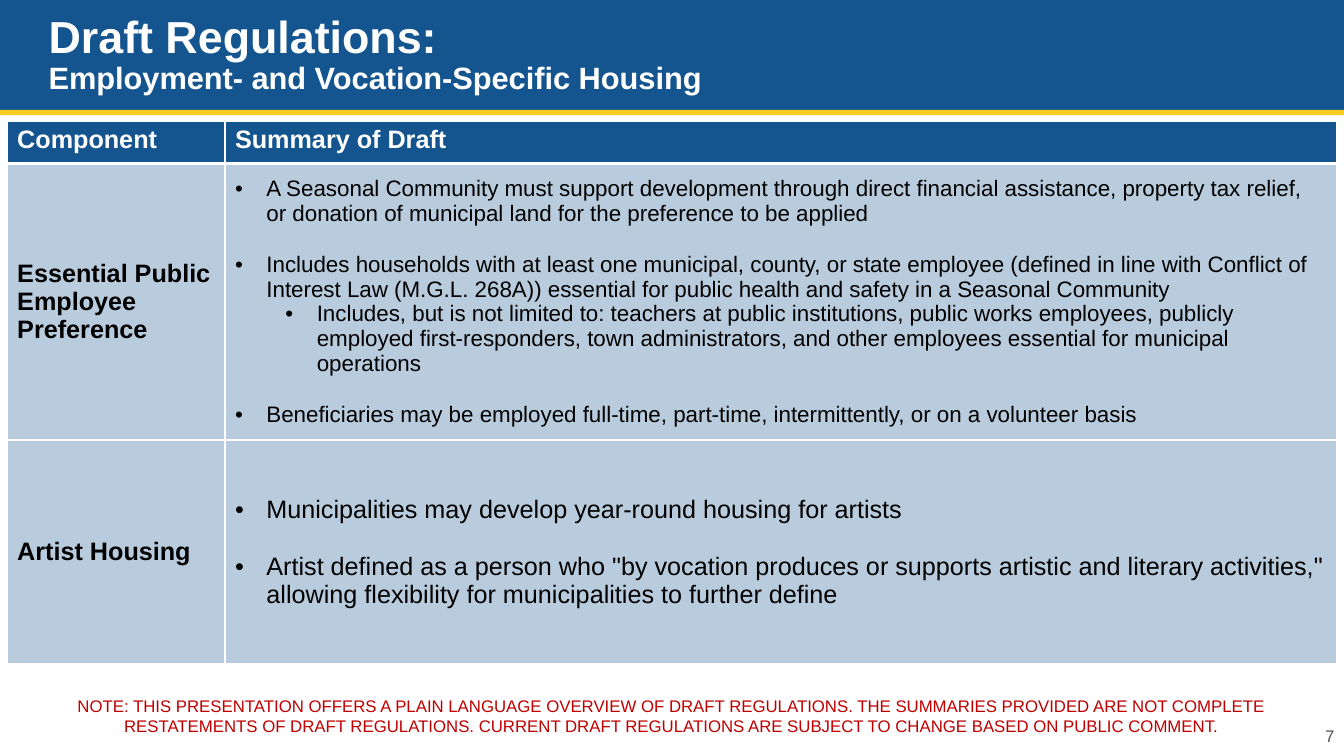
"""Build the slide on draft regulations for employment- and vocation-specific housing."""
import pptx
import pptx.util
import pptx.dml.color
import pptx.enum.shapes
import pptx.enum.text
import pptx.oxml
import pptx.oxml.ns
from lxml import etree

Cm, Pt = pptx.util.Cm, pptx.util.Pt
RGB = pptx.dml.color.RGBColor.from_string
ALIGN = pptx.enum.text.PP_ALIGN
MIDDLE = pptx.enum.text.MSO_ANCHOR.MIDDLE
TOP = pptx.enum.text.MSO_ANCHOR.TOP

THEME = {
    "font": "Arial",
    "blue": "14558F", "yellow": "F9CE20", "pale": "B9CCDD", "white": "FFFFFF",
    "black": "000000", "grey": "535353", "red": "C00000",
    "title": 32, "subtitle": 22, "large": 18, "body": 16, "small": 12,
}


def add_run(p, text, size, color, bold=False):
    r = p.add_run()
    r.text = text
    values = {"name": THEME["font"], "size": Pt(THEME[size]), "bold": bold}
    for name, value in values.items():
        setattr(r.font, name, value)
    r.font.color.rgb = RGB(THEME[color])


def add_border(cell, side, width):
    ln = etree.SubElement(cell._tc.get_or_add_tcPr(), pptx.oxml.ns.qn(f"a:ln{side}"), w=str(Pt(width)))
    fill = etree.SubElement(ln, pptx.oxml.ns.qn("a:solidFill"))
    etree.SubElement(fill, pptx.oxml.ns.qn("a:srgbClr"), val=THEME["white"])


prs = pptx.Presentation()
prs.slide_width, prs.slide_height = Cm(33.87), Cm(19.05)
s = prs.slides.add_slide(prs.slide_layouts[5])

for top, height, color in [(0, 2.79, "blue"), (2.77, 0.13, "yellow")]:
    sp = s.shapes.add_shape(pptx.enum.shapes.MSO_SHAPE.RECTANGLE, 0, Cm(top), prs.slide_width, Cm(height))
    sp.shadow.inherit = False
    sp.fill.solid()
    sp.fill.fore_color.rgb = RGB(THEME[color])
    sp.line.fill.background()

title = s.shapes.title
title.element.getparent().append(title.element)
for name, value in {"left": 0.97, "top": 0, "width": 29.21, "height": 2.79}.items():
    setattr(title, name, Cm(value))
tf = title.text_frame
tf.auto_size = pptx.enum.text.MSO_AUTO_SIZE.NONE
tf.vertical_anchor = MIDDLE
p = tf.paragraphs[0]
p.alignment, p.line_spacing = ALIGN.LEFT, 0.9
add_run(p, "Draft Regulations:", "title", "white", True)
p.add_line_break()
add_run(p, "Employment- and Vocation-Specific Housing", "subtitle", "white", True)

BOXES = [
    ((26.26, 18.03, 7.62, 1.02), ALIGN.RIGHT, "grey", "7"),
    ((0.18, 17.04, 33.5, 2.01), ALIGN.CENTER, "red",
     "NOTE: THIS PRESENTATION OFFERS A PLAIN LANGUAGE OVERVIEW OF DRAFT REGULATIONS. "
     "THE SUMMARIES PROVIDED ARE NOT COMPLETE RESTATEMENTS OF DRAFT REGULATIONS. "
     "CURRENT DRAFT REGULATIONS ARE SUBJECT TO CHANGE BASED ON PUBLIC COMMENT."),
]
for place, align, color, text in BOXES:
    tf = s.shapes.add_textbox(*map(Cm, place)).text_frame
    tf.word_wrap, tf.vertical_anchor = True, MIDDLE
    p = tf.paragraphs[0]
    p.alignment = align
    add_run(p, text, "small", color)

COMPONENTS = [
    ("Essential Public Employee Preference", "body", 18.4, [
        (0, "A Seasonal Community must support development through direct financial assistance, "
            "property tax relief,\u00a0or donation of municipal land for the preference to be applied"
            .replace("\u00a0", " ")),
        (0, "Includes households with at least one municipal, county, or state employee (defined in "
            "line with Conflict of Interest Law (M.G.L. 268A)) essential for public health and "
            "safety in a Seasonal Community"),
        (1, "Includes, but is not limited to: teachers at public institutions, public works "
            "employees, publicly employed first-responders, town administrators, and other "
            "employees essential for municipal operations"),
        (0, "Beneficiaries may be employed full-time, part-time, intermittently, or on a volunteer basis"),
    ]),
    ("Artist Housing", "large", 20.7, [
        (0, "Municipalities may develop year-round housing for artists"),
        (0, 'Artist defined as a person who "by vocation produces or supports artistic and literary '
            'activities," allowing flexibility for municipalities to further define'),
    ]),
]

table = s.shapes.add_table(3, 2, Cm(0.18), Cm(3.05), Cm(33.5), Cm(13.34)).table
table.horz_banding = False
for column, width in zip(table.columns, [5.49, 28.01]):
    column.width = Cm(width)
for row, height in zip(table.rows, [1.07, 6.63, 5.64]):
    row.height = Cm(height)

for i, row in enumerate(table.rows):
    for cell in row.cells:
        for side, width in {"L": 1, "R": 1, "T": 3 if i == 1 else 1, "B": 3 if i == 0 else 1}.items():
            add_border(cell, side, width)
        cell.fill.solid()
        cell.fill.fore_color.rgb = RGB(THEME["pale" if i else "blue"])
        cell.vertical_anchor = MIDDLE if i else TOP

for j, heading in enumerate(["Component", "Summary of Draft"]):
    add_run(table.cell(0, j).text_frame.paragraphs[0], heading, "large", "white", True)

for i, (component, size, gap, points) in enumerate(COMPONENTS, 1):
    add_run(table.cell(i, 0).text_frame.paragraphs[0], component, "large", "black", True)
    tf = table.cell(i, 1).text_frame
    for n, (level, text) in enumerate(points):
        p = tf.add_paragraph() if n else tf.paragraphs[0]
        pPr = p._p.get_or_add_pPr()
        pPr.set("marL", str(Cm(0.79 + 1.27 * level)))
        pPr.set("indent", str(Cm(-0.79)))
        etree.SubElement(pPr, pptx.oxml.ns.qn("a:buFont"), typeface=THEME["font"])
        etree.SubElement(pPr, pptx.oxml.ns.qn("a:buChar"), char="•")
        p.level = level
        p.space_before = Pt(gap if n and level == 0 else 0)
        add_run(p, text, size, "black")

prs.save("out.pptx")
